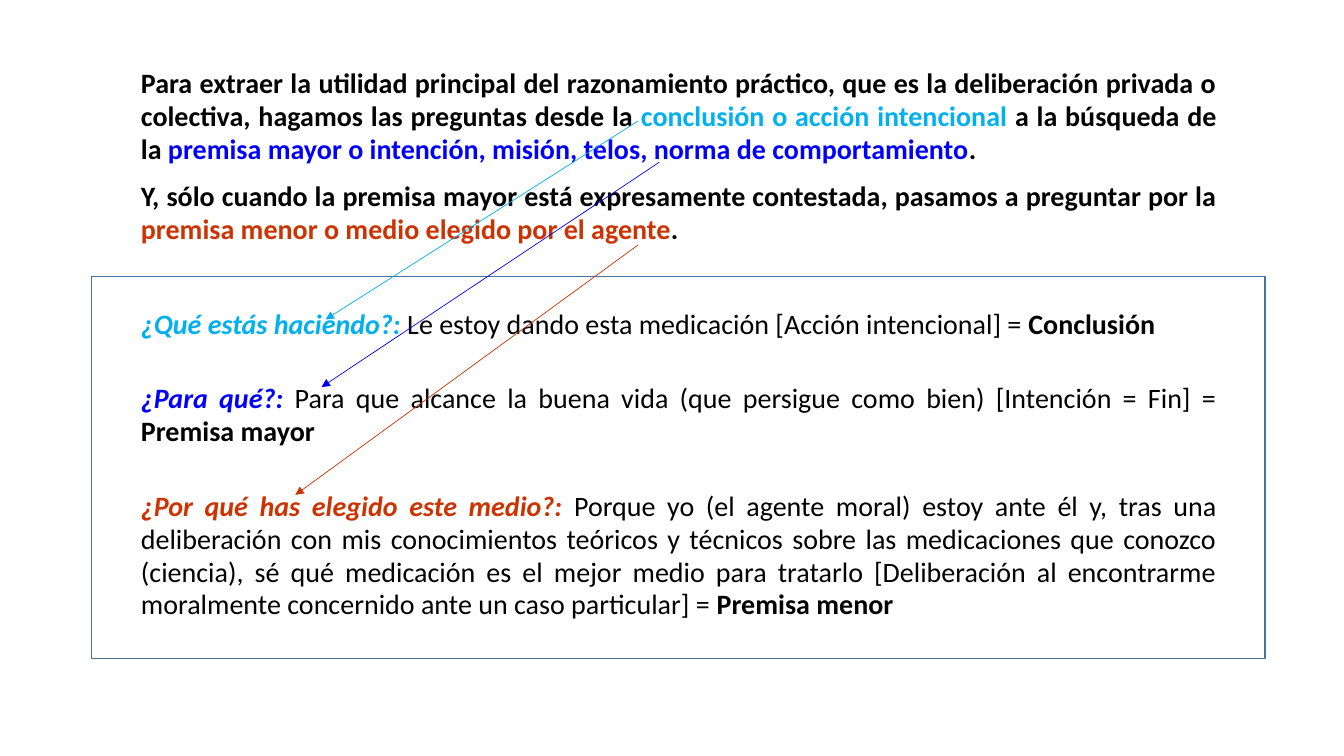
import pptx
import pptx.util
import pptx.dml.color
import pptx.enum.shapes
import pptx.enum.text
import pptx.oxml
import pptx.oxml.ns

Pt = pptx.util.Pt
RGBColor = pptx.dml.color.RGBColor

BLACK = RGBColor(0x00, 0x00, 0x00)
CONCLUSION = RGBColor(0x00, 0xB0, 0xF0)
MAJOR_PREMISE = RGBColor(0x00, 0x00, 0xFF)
MINOR_PREMISE = RGBColor(0xCC, 0x33, 0x00)
FRAME_LINE = RGBColor(0x43, 0x73, 0x9E)

INTRODUCTION = [
    (0, [
        ("Para extraer la utilidad principal del razonamiento práctico, que es la deliberación "
         "privada o colectiva, hagamos las preguntas desde la ", BLACK),
        ("conclusión o acción intencional ", CONCLUSION),
        ("a la búsqueda de la ", BLACK),
        ("premisa mayor o intención, misión, telos, norma de comportamiento", MAJOR_PREMISE),
        (".", BLACK),
    ]),
    (10, [
        ("Y, sólo cuando la premisa mayor está expresamente contestada, pasamos a preguntar "
         "por la ", BLACK),
        ("premisa menor o medio elegido por el agente", MINOR_PREMISE),
        (".", BLACK),
    ]),
]

QUESTIONS = [
    (44.5, CONCLUSION, "¿Qué estás haciendo?: ",
     "Le estoy dando esta medicación [Acción intencional] = ", "Conclusión"),
    (29.5, MAJOR_PREMISE, "¿Para qué?: ",
     "Para que alcance la buena vida (que persigue como bien) [Intención = Fin] = ",
     "Premisa mayor"),
    (29.5, MINOR_PREMISE, "¿Por qué has elegido este medio?: ",
     "Porque yo (el agente moral) estoy ante él y, tras una deliberación con mis conocimientos "
     "teóricos y técnicos sobre las medicaciones que conozco (ciencia), sé qué medicación es el "
     "mejor medio para tratarlo [Deliberación al encontrarme moralmente concernido ante un caso "
     "particular] = ", "Premisa menor"),
]

ARROWS = [
    (CONCLUSION, (362.2, 41.8), (139, 183.6)),
    (MAJOR_PREMISE, (377.3, 71.3), (136.1, 231.9)),
    (MINOR_PREMISE, (362.2, 130.4), (117.4, 308.9)),
]


def add_run(paragraph, wording, color, bold=True, italic=False):
    """Append one coloured run to a paragraph."""
    run = paragraph.add_run()
    run.text = wording
    run.font.color.rgb = color
    run.font.bold = bold
    run.font.italic = italic


def add_paragraph(frame, space_before):
    """Return the next justified paragraph of the text frame."""
    first = frame.paragraphs[0]
    paragraph = frame.add_paragraph() if first.runs else first
    paragraph.alignment = pptx.enum.text.PP_ALIGN.JUSTIFY
    paragraph.space_before = Pt(space_before)
    paragraph.line_spacing = 0.985
    paragraph.font.name = "Calibri"
    paragraph.font.size = Pt(20)
    return paragraph


def add_reasoning(slide, left, top, width, height):
    """Write the introduction and the three questions in the given box."""
    reasoning = slide.shapes.add_textbox(Pt(left), Pt(top), Pt(width), Pt(height)).text_frame
    reasoning.word_wrap = True
    for space_before, phrases in INTRODUCTION:
        paragraph = add_paragraph(reasoning, space_before)
        for wording, color in phrases:
            add_run(paragraph, wording, color)
    for space_before, color, question, answer, role in QUESTIONS:
        paragraph = add_paragraph(reasoning, space_before)
        add_run(paragraph, question, color, italic=True)
        add_run(paragraph, answer, BLACK, bold=False)
        add_run(paragraph, role, BLACK)


def add_question_frame(slide, left, top, width, height):
    """Outline the area of the questions."""
    outline = slide.shapes.add_shape(pptx.enum.shapes.MSO_SHAPE.RECTANGLE,
                                     Pt(left), Pt(top), Pt(width), Pt(height))
    outline.shadow.inherit = False
    outline.fill.background()
    outline.line.color.rgb = FRAME_LINE
    outline.line.width = Pt(1)


def add_arrows(slide, left, top):
    """Link each key phrase to its question, measured from the text's corner."""
    for color, (x1, y1), (x2, y2) in ARROWS:
        arrow = slide.shapes.add_connector(pptx.enum.shapes.MSO_CONNECTOR.STRAIGHT,
                                           Pt(left + x1), Pt(top + y1),
                                           Pt(left + x2), Pt(top + y2))
        arrow.line.color.rgb = color
        arrow.line.width = Pt(0.5)
        properties = arrow.element.spPr
        head = pptx.oxml.parse_xml(
            f'<a:tailEnd {pptx.oxml.ns.nsdecls("a")} type="triangle"/>')
        arrow.line._get_or_add_ln().append(head)
        properties.append(pptx.oxml.parse_xml(f'<a:effectLst {pptx.oxml.ns.nsdecls("a")}/>'))


def main():
    """Build and save the slide."""
    deck = pptx.Presentation()
    deck.slide_width, deck.slide_height = Pt(960), Pt(540)
    slide = deck.slides.add_slide(deck.slide_layouts.get_by_name("Blank"))
    left, top = 93.6, 44.6
    add_reasoning(slide, left, top, 782.6, 468.7)
    add_question_frame(slide, 65.5, 197.3, 838.1, 272.9)
    add_arrows(slide, left, top)
    deck.save("out.pptx")


if __name__ == "__main__":
    main()
